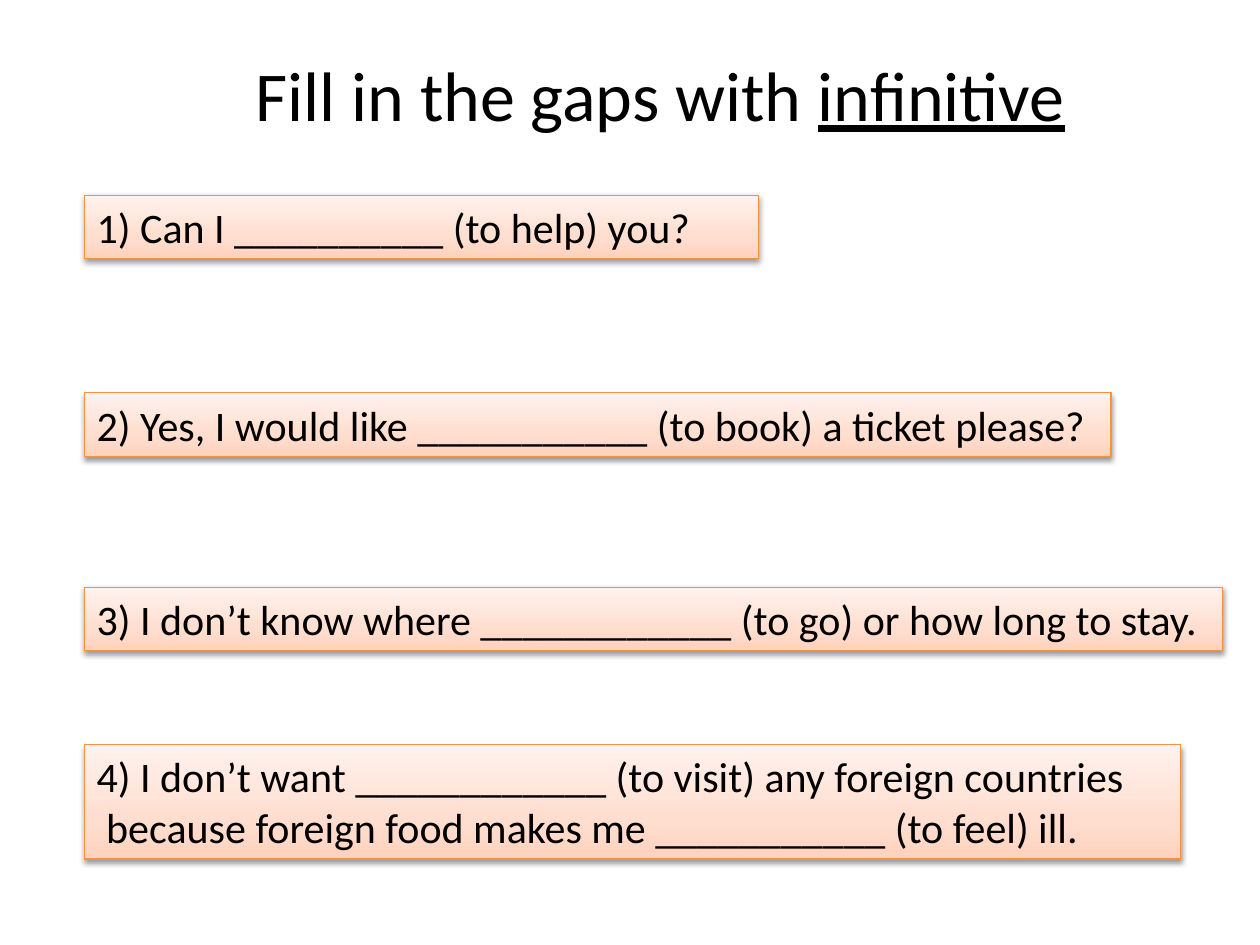
from copy import deepcopy
from dataclasses import dataclass

from lxml import etree
from pptx import Presentation
from pptx.dml.color import RGBColor
from pptx.enum.shapes import MSO_SHAPE
from pptx.enum.text import MSO_ANCHOR, MSO_AUTO_SIZE, PP_ALIGN
from pptx.oxml.ns import qn
from pptx.util import Cm, Pt

RECTANGLE = MSO_SHAPE.RECTANGLE
TOP = MSO_ANCHOR.TOP
FIT_SHAPE = MSO_AUTO_SIZE.SHAPE_TO_FIT_TEXT
LEFT = PP_ALIGN.LEFT

BLACK = RGBColor(0x00, 0x00, 0x00)
ORANGE = RGBColor(0xF6, 0x92, 0x40)
PEACH_STOPS = (
    (0, RGBColor(0xFF, 0xD2, 0xBD)),
    (0.35, RGBColor(0xFF, 0xDE, 0xD0)),
    (1, RGBColor(0xFF, 0xF2, 0xED)),
)
QUESTION_LEFT = Cm(1.7)
FRAME_FORMAT = {"vertical_anchor": TOP, "auto_size": FIT_SHAPE}
TITLE_FONT = {"name": "Calibri", "size": Pt(40)}
QUESTION_FONT = {"name": "Calibri", "size": Pt(24)}


@dataclass
class Question:
    top: float
    width: float
    height: float
    lines: tuple[str, ...]
    wrap: bool = False


QUESTIONS = (
    Question(3.94, 13.59, 1.28, ("1) Can I __________ (to help) you?",), True),
    Question(7.92, 20.7, 1.28,
             ("2) Yes, I would like ___________ (to book) a ticket please?",)),
    Question(11.84, 22.94, 1.28,
             ("3) I don’t know where ____________ (to go) or how long to stay.",)),
    Question(15.01, 22.1, 2.31,
             ("4) I don’t want ____________ (to visit) any foreign countries",
              " because foreign food makes me ___________ (to feel) ill.")),
)


def apply_format(target, values: dict) -> None:
    for name, value in values.items():
        setattr(target, name, value)


def format_paragraph(paragraph, font_values: dict) -> None:
    paragraph.alignment = LEFT
    apply_format(paragraph.font, font_values)
    paragraph.font.color.rgb = BLACK


def fill_with_peach(shape) -> None:
    shape.fill.gradient()
    shape.fill.gradient_angle = 90
    stop_list = shape._element.spPr.find(qn("a:gradFill")).find(qn("a:gsLst"))
    stop_list.insert(1, deepcopy(stop_list[0]))
    for stop, (position, color) in zip(shape.fill.gradient_stops, PEACH_STOPS):
        stop.position = position
        stop.color.rgb = color


def add_soft_shadow(shape) -> None:
    shape.shadow.inherit = False
    effects = shape._element.spPr.find(qn("a:effectLst"))
    shadow = etree.SubElement(effects, qn("a:outerShdw"), blurRad="40000",
                              dist="20000", dir="5400000", rotWithShape="0")
    color = etree.SubElement(shadow, qn("a:srgbClr"), val=str(BLACK))
    etree.SubElement(color, qn("a:alpha"), val="38000")


def add_title(slide) -> None:
    title = slide.shapes.title
    apply_format(title, {"left": Cm(4.9), "top": Cm(0.91),
                         "width": Cm(17), "height": Cm(1.96)})
    frame = title.text_frame
    apply_format(frame, FRAME_FORMAT | {"word_wrap": False})
    paragraph = frame.paragraphs[0]
    format_paragraph(paragraph, TITLE_FONT)
    paragraph.add_run().text = "Fill in the gaps with "
    verb_form = paragraph.add_run()
    verb_form.text = "infinitive"
    verb_form.font.underline = True


def add_question(slide, question: Question) -> None:
    shape = slide.shapes.add_shape(RECTANGLE, QUESTION_LEFT, Cm(question.top),
                                   Cm(question.width), Cm(question.height))
    fill_with_peach(shape)
    shape.line.color.rgb = ORANGE
    shape.line.width = Pt(0.75)
    add_soft_shadow(shape)
    frame = shape.text_frame
    apply_format(frame, FRAME_FORMAT | {"word_wrap": question.wrap})
    frame.text = "\n".join(question.lines)
    for paragraph in frame.paragraphs:
        format_paragraph(paragraph, QUESTION_FONT)


def main() -> None:
    presentation = Presentation()
    presentation.slide_width = Cm(25.4)
    presentation.slide_height = Cm(19.05)
    slide = presentation.slides.add_slide(presentation.slide_layouts[5])
    add_title(slide)
    for question in QUESTIONS:
        add_question(slide, question)
    presentation.save("out.pptx")


if __name__ == "__main__":
    main()
